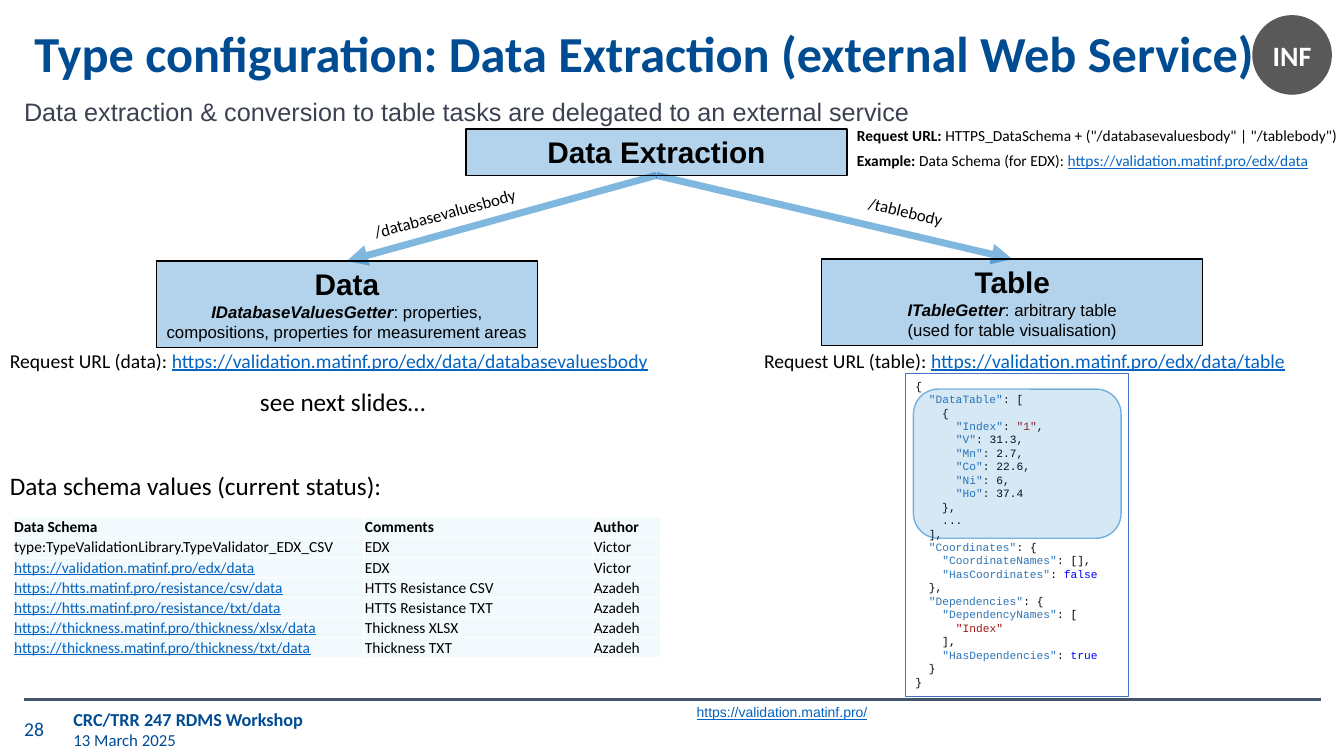
from lxml.etree import SubElement
from pptx import Presentation
from pptx.dml.color import RGBColor
from pptx.enum.shapes import MSO_CONNECTOR, MSO_SHAPE
from pptx.enum.text import MSO_ANCHOR, MSO_AUTO_SIZE, PP_ALIGN
from pptx.oxml.ns import qn
from pptx.util import Pt

PX = 9144
BLACK = RGBColor(0x00, 0x00, 0x00)
WHITE = RGBColor(0xFF, 0xFF, 0xFF)
NAVY = RGBColor(0x00, 0x4C, 0x93)
BLUE = RGBColor(0x00, 0x70, 0xC0)
SKY = RGBColor(0x00, 0xB0, 0xF0)
FRAME = RGBColor(0x44, 0x72, 0xC4)
RULE = RGBColor(0x44, 0x54, 0x6A)
GREY = RGBColor(0x59, 0x59, 0x59)
SLATE = RGBColor(0x3B, 0x41, 0x51)
LINK = RGBColor(0x05, 0x63, 0xC1)
KEY = RGBColor(0x2E, 0x75, 0xB6)
TEXT = RGBColor(0xA3, 0x15, 0x15)
BOOL = RGBColor(0x00, 0x00, 0xFF)

SITE = "https://validation.matinf.pro/"
ROWS = [
    ("Data Schema", "Comments", "Author"),
    ("type:TypeValidationLibrary.TypeValidator_EDX_CSV", "EDX", "Victor"),
    (SITE + "edx/data", "EDX", "Victor"),
    ("https://htts.matinf.pro/resistance/csv/data", "HTTS Resistance CSV", "Azadeh"),
    ("https://htts.matinf.pro/resistance/txt/data", "HTTS Resistance TXT", "Azadeh"),
    ("https://thickness.matinf.pro/thickness/xlsx/data", "Thickness XLSX", "Azadeh"),
    ("https://thickness.matinf.pro/thickness/txt/data", "Thickness TXT", "Azadeh"),
]
CODE = """{
  "DataTable": [
    {
      "Index": "1",
      "V": 31.3,
      "Mn": 2.7,
      "Co": 22.6,
      "Ni": 6,
      "Ho": 37.4
    },
    ...
  ],
  "Coordinates": {
    "CoordinateNames": [],
    "HasCoordinates": false
  },
  "Dependencies": {
    "DependencyNames": [
      "Index"
    ],
    "HasDependencies": true
  }
}"""


def scale(*sizes):
    return [size * PX for size in sizes]


def fade(node, alpha):
    tint = node.find(".//" + qn("a:srgbClr"))
    SubElement(tint, qn("a:alpha"), val=str(alpha * 1000))


def write(frame, runs, size, font="Calibri", color=BLACK, align=PP_ALIGN.LEFT):
    para = frame.paragraphs[0]
    if para.runs:
        para = frame.add_paragraph()
    para.alignment = align
    for words, style in runs:
        run = para.add_run()
        run.text = words
        face = run.font
        face.name, face.size = font, Pt(size)
        face.bold = "b" in style
        face.italic = "i" in style
        face.underline = "u" in style
        face.color.rgb = LINK if "u" in style else color
    return para


def setup(frame, pad=(10, 5, 10, 5), anchor=MSO_ANCHOR.TOP):
    frame.word_wrap = True
    frame.auto_size = MSO_AUTO_SIZE.NONE
    frame.vertical_anchor = anchor
    (frame.margin_left, frame.margin_top,
     frame.margin_right, frame.margin_bottom) = scale(*pad)
    return frame


def label(slide, box, runs, size, font="Calibri", color=BLACK, turn=0, **layout):
    shape = slide.shapes.add_textbox(*scale(*box))
    shape.rotation = turn
    frame = setup(shape.text_frame, **layout)
    write(frame, runs, size, font, color)
    return frame


def block(slide, kind, box, fill, alpha, edge, width):
    shape = slide.shapes.add_shape(kind, *scale(*box))
    shape.shadow.inherit = False
    if fill is None:
        shape.fill.background()
    else:
        shape.fill.solid()
        shape.fill.fore_color.rgb = fill
        fade(shape._element.spPr, alpha)
    if edge is None:
        shape.line.fill.background()
    else:
        shape.line.color.rgb = edge
        shape.line.width = Pt(width)
    return shape


def node(slide, box, title, *lines):
    shape = block(slide, MSO_SHAPE.RECTANGLE, box, BLUE, 30, BLACK, 1)
    frame = setup(shape.text_frame)
    write(frame, [(title, "b")], 21.3, "Arial", align=PP_ALIGN.CENTER)
    for runs in lines:
        write(frame, runs, 12, "Arial", align=PP_ALIGN.CENTER)


def stroke(slide, ends, color, width):
    link = slide.shapes.add_connector(MSO_CONNECTOR.STRAIGHT, *scale(*ends))
    link.line.color.rgb = color
    link.line.width = Pt(width)
    SubElement(link._element.spPr, qn("a:effectLst"))
    return link


def arrow(slide, ends):
    edge = stroke(slide, ends, BLUE, 5).line._get_or_add_ln()
    fade(edge, 50)
    SubElement(edge, qn("a:tailEnd"), type="triangle")


def border(cell):
    props = cell._tc.get_or_add_tcPr()
    for spot, side in enumerate(("lnL", "lnR", "lnT", "lnB")):
        edge = SubElement(props, qn("a:" + side), w=str(Pt(1)))
        fill = SubElement(edge, qn("a:solidFill"))
        SubElement(fill, qn("a:srgbClr"), val=str(WHITE))
        props.insert(spot, edge)


def grid(slide):
    box = scale(13, 513, 642, 19 * len(ROWS))
    table = slide.shapes.add_table(len(ROWS), 3, *box).table
    table.first_row = table.horz_banding = False
    for column, width in zip(table.columns, scale(348, 227, 67)):
        column.width = width
    for top, row in enumerate(ROWS):
        table.rows[top].height = 19 * PX
        for left, words in enumerate(row):
            cell = table.cell(top, left)
            (cell.margin_left, cell.margin_top,
             cell.margin_right, cell.margin_bottom) = scale(1, 1, 1, 0)
            cell.vertical_anchor = MSO_ANCHOR.BOTTOM
            cell.fill.solid()
            cell.fill.fore_color.rgb = SKY
            fade(cell._tc.tcPr, 5)
            border(cell)
            style = "b" if top == 0 else "u" if words.startswith("https") else ""
            write(cell.text_frame, [(words, style)], 11)


def tokens(line):
    parts = line.split('"')
    for spot, part in enumerate(parts):
        if spot % 2:
            yield f'"{part}"', KEY if parts[spot + 1].startswith(":") else TEXT
            continue
        word = next((word for word in ("true", "false") if part.endswith(word)), "")
        plain = part.removesuffix(word)
        if plain:
            yield plain, BLACK
        if word:
            yield word, BOOL


def code(slide):
    shape = block(slide, MSO_SHAPE.RECTANGLE, (898, 371, 221, 320), None, 0, FRAME, 0.75)
    frame = setup(shape.text_frame)
    for line in CODE.split("\n"):
        pairs = list(tokens(line))
        para = write(frame, [(words, "") for words, hue in pairs], 8, "Courier New")
        para.line_spacing = Pt(9.6)
        for run, (words, hue) in zip(para.runs, pairs):
            run.font.color.rgb = hue
    mark = block(slide, MSO_SHAPE.ROUNDED_RECTANGLE, (906, 386, 206, 148), BLUE, 16, BLUE, 1)
    fade(mark.line._get_or_add_ln(), 50)


def header(slide):
    title = slide.shapes.title
    title.left, title.top, title.width, title.height = scale(24, 12, 1287, 87)
    frame = setup(title.text_frame, (10, 4, 10, 4), MSO_ANCHOR.MIDDLE)
    words = "Type configuration: Data Extraction (external Web Service)"
    write(frame, [(words, "b")], 36, color=NAVY).line_spacing = 0.9
    badge = block(slide, MSO_SHAPE.OVAL, (1242, 15, 79, 79), GREY, 100, None, 0)
    frame = setup(badge.text_frame, (4, 4, 4, 4), MSO_ANCHOR.MIDDLE)
    write(frame, [("INF", "b")], 20, color=WHITE, align=PP_ALIGN.CENTER)
    words = "Data extraction & conversion to table tasks are delegated to an external service"
    label(slide, (14, 91, 1286, 33), [(words, "")], 18, "Arial", SLATE)


def footer(slide):
    stroke(slide, (24, 694, 1310, 694), RULE, 1.5)
    label(slide, (24, 699, 53, 47), [("28", "")], 14, color=NAVY,
          pad=(0, 5, 10, 5), anchor=MSO_ANCHOR.MIDDLE)
    frame = label(slide, (63, 697, 546, 53), [("CRC/TRR 247 RDMS Workshop", "b")], 13,
                  color=NAVY, anchor=MSO_ANCHOR.MIDDLE)
    write(frame, [("13 March 2025", "")], 12, color=NAVY)
    label(slide, (687, 696, 593, 53), [(SITE, "u")], 10, "Arial", pad=(4, 2, 4, 0))


def notes(slide):
    label(slide, (0, 341, 740, 34), [("Request URL (data): ", ""),
          (SITE + "edx/data/databasevaluesbody", "u")], 14)
    label(slide, (748, 341, 580, 34), [("Request URL (table): ", ""),
          (SITE + "edx/data/table", "u")], 14)
    label(slide, (248, 378, 300, 40), [("see next slides…", "")], 18)
    label(slide, (0, 462, 600, 40), [("Data schema values (current status):", "")], 18)
    frame = label(slide, (840, 120, 503, 56), [("Request URL: ", "b"),
                  ('HTTPS_DataSchema + ("/databasevaluesbody" | "/tablebody")', "")], 11)
    para = write(frame, [("Example: ", "b"), ("Data Schema (for EDX): ", ""),
                         (SITE + "edx/data", "u")], 11)
    para.space_before = Pt(5)


def flow(slide):
    arrow(slide, (651, 174, 1004, 257))
    arrow(slide, (651, 174, 344, 259))
    node(slide, (155, 259, 378, 86), "Data", [("IDatabaseValuesGetter", "bi"),
         (": properties, compositions, properties for measurement areas", "")])
    node(slide, (815, 257, 378, 86), "Table",
         [("ITableGetter", "bi"), (": arbitrary table", "")],
         [("(used for table visualisation)", "")])
    node(slide, (462, 128, 378, 46), "Data Extraction")
    label(slide, (359, 195, 177, 30), [("/databasevaluesbody", "")], 12, turn=344.8)
    label(slide, (851, 197, 112, 30), [("/tablebody", "")], 12, turn=13.7)


def main():
    deck = Presentation()
    deck.slide_width, deck.slide_height = scale(1333, 750)
    slide = deck.slides.add_slide(deck.slide_layouts[5])
    header(slide)
    footer(slide)
    grid(slide)
    flow(slide)
    code(slide)
    notes(slide)
    deck.save("out.pptx")


if __name__ == "__main__":
    main()
